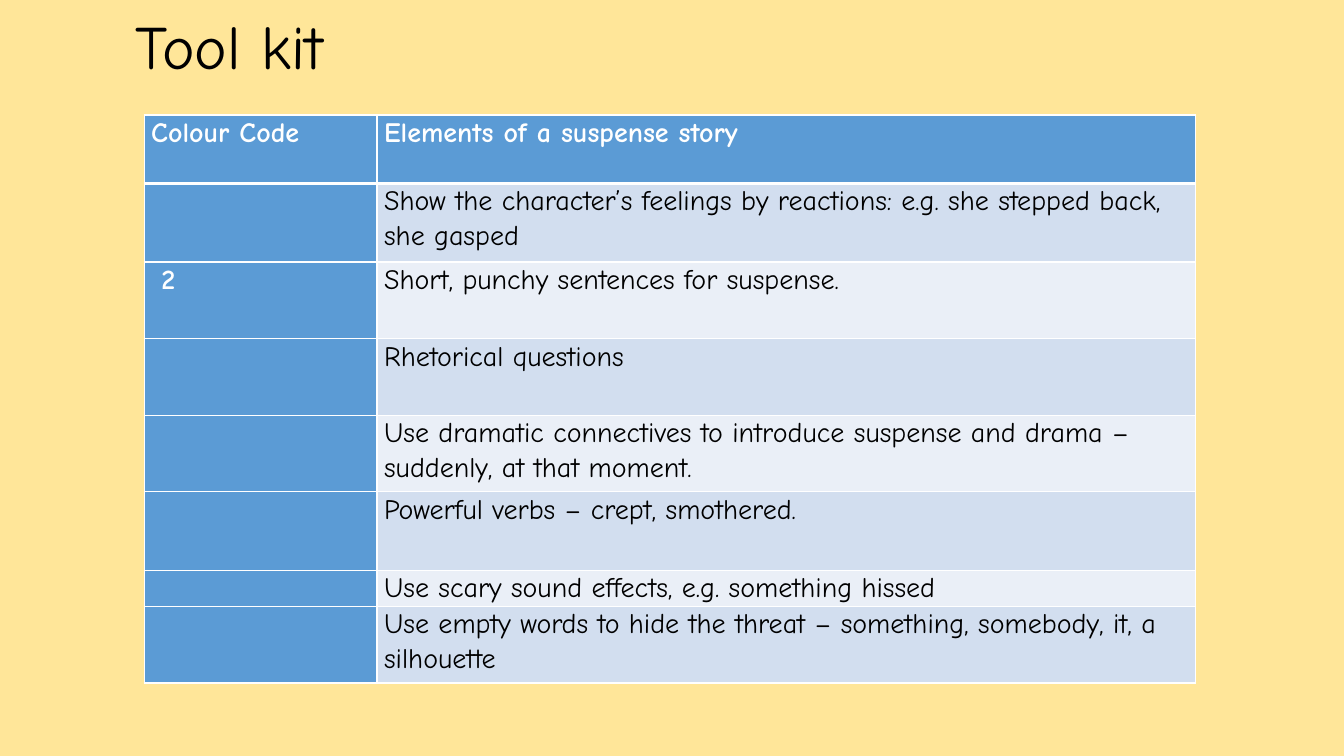
import dataclasses
import typing

import pptx
import pptx.dml.color
import pptx.enum.text
import pptx.oxml
import pptx.oxml.ns
import pptx.util

Inches = pptx.util.Inches
Pt = pptx.util.Pt


@dataclasses.dataclass(frozen=True)
class Theme:
    font: str = "Comic Neue"
    page: str = "FFE699"
    ink: str = "000000"
    white: str = "FFFFFF"
    blue: str = "5B9BD5"
    bands: tuple[str, str] = ("D2DEEF", "EAEFF7")
    title: int = 44
    body: int = 20
    thin: int = 1
    thick: int = 3


@dataclasses.dataclass(frozen=True)
class Row:
    height: float
    text: str
    code: str = ""
    indent: float = 0


THEME = Theme()
WIDTHS = (2.31, 8.12)
ROWS = (
    Row(0.68, "Elements of a suspense story", "Colour Code"),
    Row(0.78, "Show the character’s feelings by reactions: e.g. she stepped back, she gasped"),
    Row(0.76, "Short, punchy sentences for suspense.", "2", 0.1),
    Row(0.76, "Rhetorical questions"),
    Row(0.76, "Use dramatic connectives to introduce suspense and drama – suddenly, at that moment."),
    Row(0.78, "Powerful verbs – crept, smothered."),
    Row(0.35, "Use scary sound effects, e.g. something hissed"),
    Row(0.76, "Use empty words to hide the threat – something, somebody, it, a silhouette"),
)


def apply(target: typing.Any, values: dict[str, typing.Any]) -> None:
    for name, value in values.items():
        setattr(target, name, value)


def paint(fill: typing.Any, color: str) -> None:
    fill.solid()
    fill.fore_color.rgb = pptx.dml.color.RGBColor.from_string(color)


def write(frame: typing.Any, text: str, size: int, color: str, bold: bool, space: float) -> None:
    line = frame.paragraphs[0]
    line.line_spacing = space
    run = line.add_run()
    run.text = text
    apply(run.font, {"name": THEME.font, "size": Pt(size), "bold": bold})
    paint(run.font.fill, color)


def border(cell: typing.Any, sides: dict[str, int]) -> None:
    """Put white edges, widths in points, ahead of the cell's fill."""
    props = cell._tc.get_or_add_tcPr()
    for index, (side, width) in enumerate(sides.items()):
        props.insert(index, pptx.oxml.parse_xml(
            f'<a:ln{side} {pptx.oxml.ns.nsdecls("a")} w="{Pt(width)}">'
            f'<a:solidFill><a:srgbClr val="{THEME.white}"/></a:solidFill></a:ln{side}>'))


def add_title(slide: typing.Any) -> None:
    box = slide.shapes.add_textbox(Inches(1.25), 0, Inches(10.33), Inches(0.99))
    apply(box.text_frame, {"word_wrap": True,
                           "vertical_anchor": pptx.enum.text.MSO_ANCHOR.MIDDLE})
    write(box.text_frame, "Tool kit", THEME.title, THEME.ink, False, 0.9)


def add_cell(cell: typing.Any, row: Row, index: int, column: int) -> None:
    accent = index == 0 or column == 0
    text, indent = (row.text, 0) if column else (row.code, row.indent)
    apply(cell, {"margin_left": Inches(0.07 + indent), "margin_right": Inches(0.07),
                 "margin_top": 0, "margin_bottom": 0})
    if text:
        write(cell.text_frame, text, THEME.body,
              THEME.white if accent else THEME.ink, accent, 1.07)
    paint(cell.fill, THEME.blue if accent else THEME.bands[(index - 1) % 2])
    border(cell, {"L": THEME.thin, "R": THEME.thin,
                  "T": THEME.thick if index == 1 else THEME.thin,
                  "B": THEME.thick if index == 0 else THEME.thin})


def add_grid(slide: typing.Any) -> None:
    height = sum(row.height for row in ROWS)
    table = slide.shapes.add_table(len(ROWS), len(WIDTHS), Inches(1.43), Inches(1.14),
                                   Inches(sum(WIDTHS)), Inches(height)).table
    for column, width in enumerate(WIDTHS):
        table.columns[column].width = Inches(width)
    for index, row in enumerate(ROWS):
        table.rows[index].height = Inches(row.height)
        for column in range(len(WIDTHS)):
            add_cell(table.cell(index, column), row, index, column)


def main() -> None:
    deck = pptx.Presentation()
    apply(deck, {"slide_width": Inches(13.33), "slide_height": Inches(7.5)})
    slide = deck.slides.add_slide(deck.slide_layouts[6])
    paint(slide.background.fill, THEME.page)
    add_title(slide)
    add_grid(slide)
    deck.save("out.pptx")


if __name__ == "__main__":
    main()
